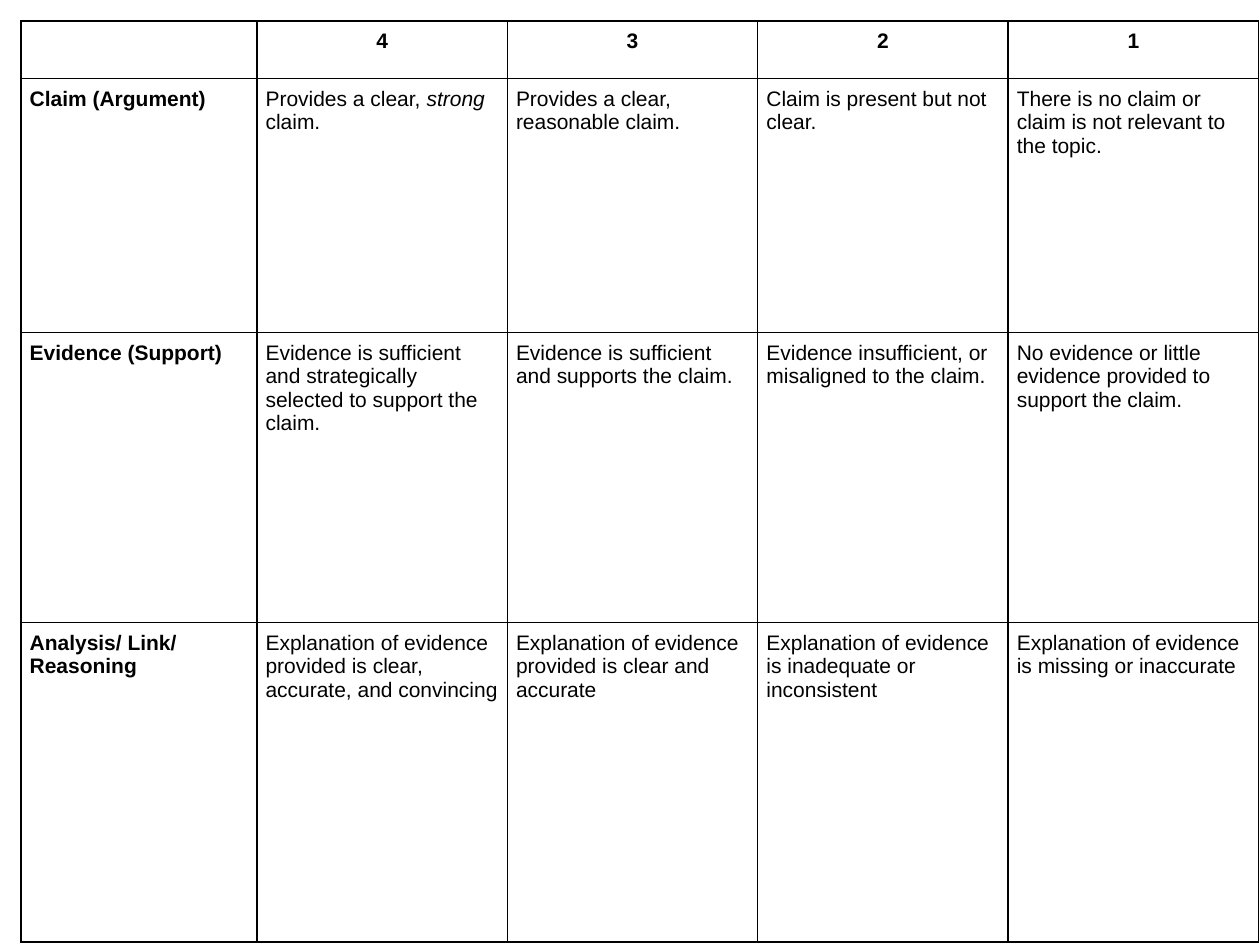
from dataclasses import dataclass

from lxml.etree import SubElement
from pptx import Presentation
from pptx.dml.color import RGBColor
from pptx.enum.text import PP_ALIGN
from pptx.oxml.ns import qn
from pptx.util import Pt


@dataclass(frozen=True)
class Theme:
    font: str = "Arial"
    size: float = 12
    ink: str = "000000"
    paper: str = "FFFFFF"
    border: float = 1
    inset: float = 5


class RubricSlide:
    """Holds the theme and the current slide, and draws the rubric on it."""

    def __init__(self, slide, theme):
        self.slide = slide
        self.theme = theme

    def table(self, left, top, widths, heights, rows):
        grid = self.slide.shapes.add_table(
            len(heights), len(widths), Pt(left), Pt(top), Pt(sum(widths)), Pt(sum(heights))
        ).table
        grid.first_row = grid.horz_banding = False
        for column, width in zip(grid.columns, widths):
            column.width = Pt(width)
        for row, height in zip(grid.rows, heights):
            row.height = Pt(height)
        for r, row in enumerate(rows):
            for c, content in enumerate(row):
                self.cell(grid.cell(r, c), content, heading=r == 0 or c == 0, centred=r == 0)

    def cell(self, cell, content, heading, centred):
        for side in ("left", "right", "top", "bottom"):
            setattr(cell, f"margin_{side}", Pt(self.theme.inset))
        self.borders(cell)
        cell.fill.solid()
        cell.fill.fore_color.rgb = RGBColor.from_string(self.theme.paper)
        paragraph = cell.text_frame.paragraphs[0]
        paragraph.alignment = PP_ALIGN.CENTER if centred else PP_ALIGN.LEFT
        phrases = [content] if isinstance(content, str) else content
        for position, phrase in enumerate(phrases):
            if phrase:
                self.run(paragraph, phrase, bold=heading, italic=position % 2 == 1)

    def run(self, paragraph, phrase, **emphasis):
        run = paragraph.add_run()
        run.text = phrase
        formats = {"name": self.theme.font, "size": Pt(self.theme.size), **emphasis}
        for attribute, value in formats.items():
            setattr(run.font, attribute, value)
        run.font.color.rgb = RGBColor.from_string(self.theme.ink)

    def borders(self, cell):
        properties = cell._tc.get_or_add_tcPr()
        for edge in ("a:lnL", "a:lnR", "a:lnT", "a:lnB"):
            line = SubElement(properties, qn(edge), w=str(Pt(self.theme.border)))
            SubElement(SubElement(line, qn("a:solidFill")), qn("a:srgbClr"), val=self.theme.ink)


RUBRIC = [
    ["", "4", "3", "2", "1"],
    [
        "Claim (Argument)",
        ("Provides a clear, ", "strong", " claim."),
        "Provides a clear, reasonable claim.",
        "Claim is present but not clear.",
        "There is no claim or claim is not relevant to the topic.",
    ],
    [
        "Evidence (Support)",
        "Evidence is sufficient and strategically selected to support the claim.",
        "Evidence is sufficient and supports the claim.",
        "Evidence insufficient, or misaligned to the claim.",
        "No evidence or little evidence provided to support the claim.",
    ],
    [
        "Analysis/ Link/ Reasoning",
        "Explanation of evidence provided is clear, accurate, and convincing",
        "Explanation of evidence provided is clear and accurate",
        "Explanation of evidence is inadequate or inconsistent",
        "Explanation of evidence is missing or inaccurate",
    ],
]


def main():
    deck = Presentation()
    deck.slide_width, deck.slide_height = Pt(720), Pt(540)
    rubric = RubricSlide(deck.slides.add_slide(deck.slide_layouts[6]), Theme())
    rubric.table(12, 12, [134.8] + [143.1] * 4, [32.9, 145.2, 165.6, 182.7], RUBRIC)
    deck.save("out.pptx")


if __name__ == "__main__":
    main()
